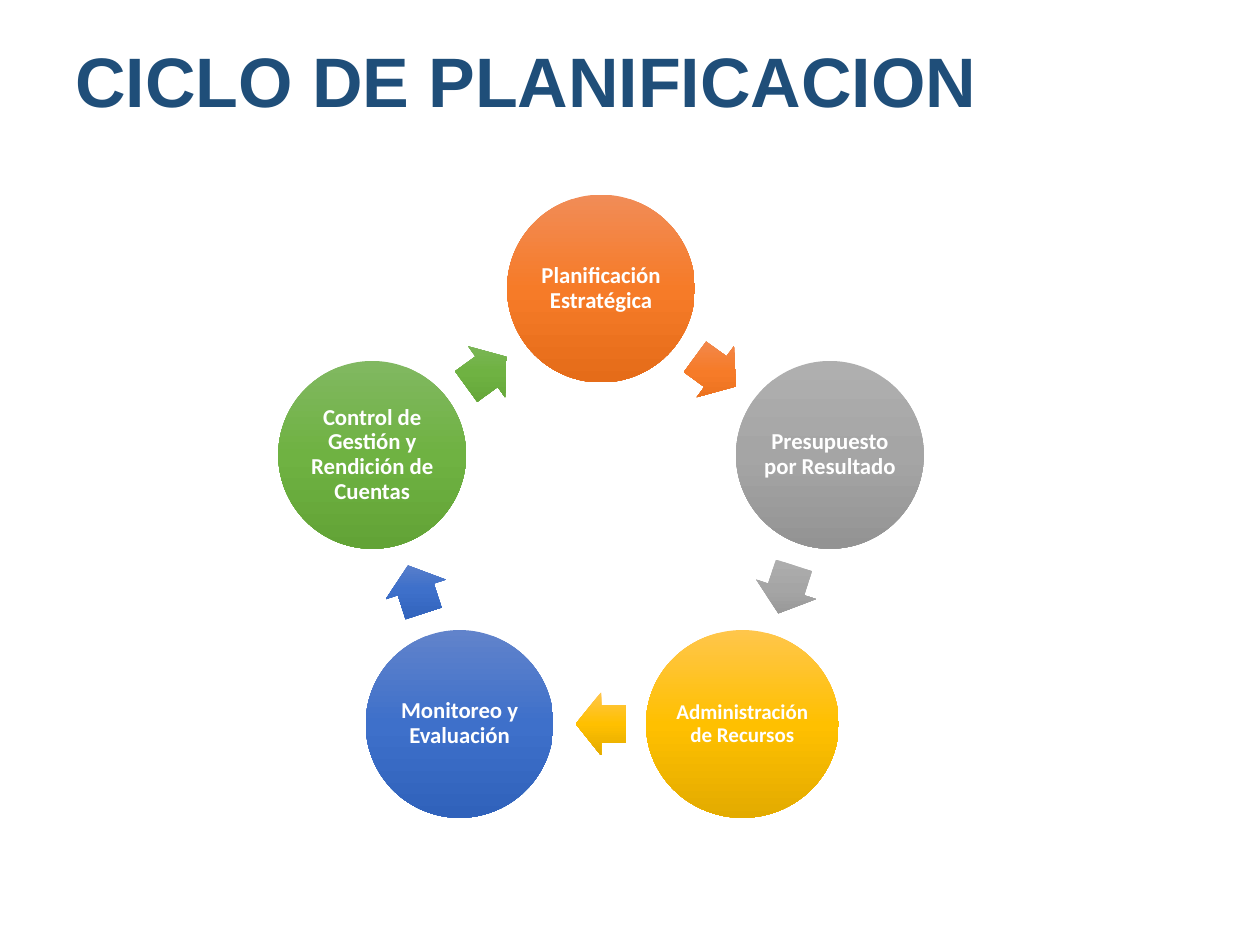
from copy import deepcopy
from math import cos, pi, radians, sin

from pptx import Presentation
from pptx.dml.color import RGBColor
from pptx.enum.shapes import MSO_SHAPE
from pptx.enum.text import MSO_ANCHOR, PP_ALIGN
from pptx.oxml.ns import qn
from pptx.util import Inches, Pt

OVAL = MSO_SHAPE.OVAL
RIGHT_ARROW = MSO_SHAPE.RIGHT_ARROW
MIDDLE = MSO_ANCHOR.MIDDLE
CENTER = PP_ALIGN.CENTER

NAVY = RGBColor(0x1F, 0x4E, 0x79)
WHITE = RGBColor(0xFF, 0xFF, 0xFF)
ORANGE = [RGBColor(0xF1, 0x8C, 0x57), RGBColor(0xF6, 0x7B, 0x28), RGBColor(0xE5, 0x6C, 0x19)]
GRAY = [RGBColor(0xAF, 0xAF, 0xAF), RGBColor(0xA5, 0xA5, 0xA5), RGBColor(0x93, 0x93, 0x93)]
GOLD = [RGBColor(0xFF, 0xC6, 0x4B), RGBColor(0xFF, 0xC0, 0x00), RGBColor(0xE3, 0xAB, 0x00)]
BLUE = [RGBColor(0x61, 0x83, 0xCB), RGBColor(0x3E, 0x70, 0xCA), RGBColor(0x30, 0x62, 0xBB)]
GREEN = [RGBColor(0x81, 0xB8, 0x61), RGBColor(0x6F, 0xB2, 0x42), RGBColor(0x62, 0xA3, 0x36)]

CENTER_X, CENTER_Y, RADIUS = 4.77, 4.2, 1.91
STAGES = [
    ("Planificación Estratégica", ORANGE, 1.49, 13),
    ("Presupuesto por Resultado", GRAY, 1.49, 13),
    ("Administración de Recursos", GOLD, 1.53, 12),
    ("Monitoreo y Evaluación", BLUE, 1.49, 13),
    ("Control de Gestión y Rendición de Cuentas", GREEN, 1.49, 13),
]
STEP = 360 / len(STAGES)


def add_cycle_shape(kind, angle, distance, width, height, colors):
    x = CENTER_X + distance * sin(radians(angle))
    y = CENTER_Y - distance * cos(radians(angle))
    shape = slide.shapes.add_shape(
        kind, Inches(x - width / 2), Inches(y - height / 2), Inches(width), Inches(height)
    )
    shape.shadow.inherit = False
    shape.line.fill.background()
    shape.fill.gradient()
    shape.fill.gradient_angle = 270
    gradient = shape._element.spPr.find(qn("a:gradFill"))
    gradient.set("rotWithShape", "0")
    stop_list = gradient.find(qn("a:gsLst"))
    stop_list.append(deepcopy(stop_list[0]))
    for stop, position, color in zip(shape.fill.gradient_stops, (0, 0.5, 1), colors):
        stop.position = position
        stop.color.rgb = color
    return shape


prs = Presentation()
prs.slide_width = Inches(10)
prs.slide_height = Inches(7.5)
slide = prs.slides.add_slide(prs.slide_layouts[6])

title = slide.shapes.add_textbox(Inches(0.5), Inches(0.05), Inches(9), Inches(1.25))
title.text_frame.word_wrap = True
title.text_frame.vertical_anchor = MIDDLE
heading = title.text_frame.paragraphs[0]
heading.text = "CICLO DE PLANIFICACION"
heading.line_spacing = 0.9
heading.font.name = "Arial"
heading.font.size = Pt(40)
heading.font.bold = True
heading.font.color.rgb = NAVY

for index, (label, colors, width, size) in enumerate(STAGES):
    angle = index * STEP
    stage = add_cycle_shape(OVAL, angle, RADIUS, width, 1.49, colors)
    frame = stage.text_frame
    frame.word_wrap = True
    frame.vertical_anchor = MIDDLE
    frame.margin_left = frame.margin_right = Inches(0)
    frame.margin_top = frame.margin_bottom = Inches(0.02)
    caption = frame.paragraphs[0]
    caption.text = label
    caption.alignment = CENTER
    caption.line_spacing = 0.9
    caption.font.name = "Calibri"
    caption.font.size = Pt(size)
    caption.font.bold = True
    caption.font.color.rgb = WHITE

    arrow_angle = angle + STEP / 2
    arrow = add_cycle_shape(
        RIGHT_ARROW, arrow_angle, RADIUS * cos(pi / len(STAGES)), 0.4, 0.5, colors
    )
    arrow.adjustments[0] = 0.6
    arrow.adjustments[1] = 0.5
    arrow.rotation = arrow_angle

prs.save("out.pptx")
